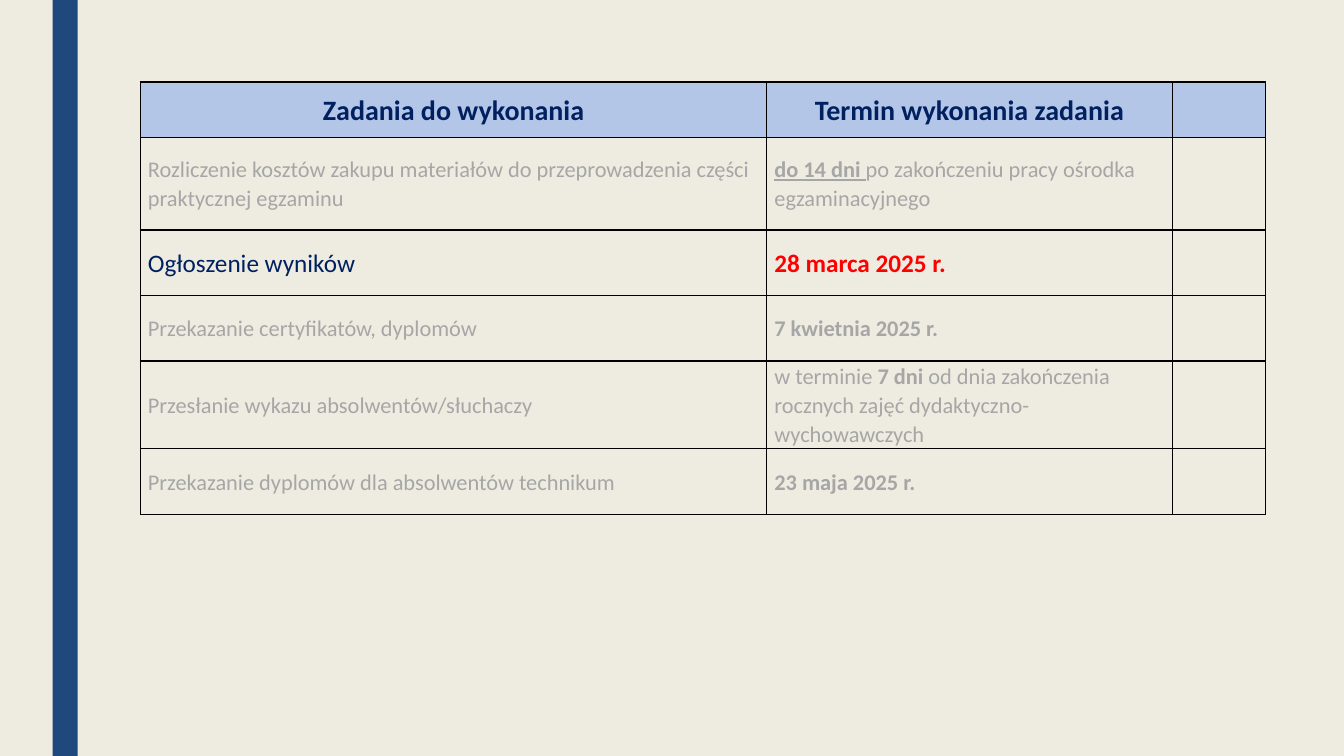
import pptx
import pptx.dml.color
import pptx.enum.shapes
import pptx.enum.text
import pptx.oxml
import pptx.oxml.ns
import pptx.util

Pt = pptx.util.Pt
ALIGN = pptx.enum.text.PP_ALIGN

COLORS = {
    "background": "EEECE1",
    "stripe": "1F497D",
    "header": "B4C6E7",
    "navy": "002060",
    "faded": "A6A6A6",
    "alert": "FF0000",
    "border": "000000",
}
COLUMN_WIDTHS = [447.5, 289.5, 67]
ROW_HEIGHTS = [39.5, 66.25, 46.8, 46.8, 46, 46.8]
HEADINGS = ["Zadania do wykonania", "Termin wykonania zadania"]
TASKS = [
    ("Rozliczenie kosztów zakupu materiałów do przeprowadzenia części praktycznej egzaminu",
     [("do 14 dni ", "bu"), ("po zakończeniu pracy ośrodka egzaminacyjnego", "")]),
    ("Ogłoszenie wyników", [("28 marca 2025 r.", "b")]),
    ("Przekazanie certyfikatów, dyplomów", [("7 kwietnia 2025 r.", "b")]),
    ("Przesłanie wykazu absolwentów/słuchaczy",
     [("w terminie ", ""), ("7 dni", "b"),
      (" od dnia zakończenia rocznych zajęć dydaktyczno-wychowawczych", "")]),
    ("Przekazanie dyplomów dla absolwentów technikum", [("23 maja 2025 r.", "b")]),
]
CURRENT_TASK = "Ogłoszenie wyników"


def rgb(name):
    return pptx.dml.color.RGBColor.from_string(COLORS[name])


def add_stripe(page, height):
    stripe = page.shapes.add_shape(
        pptx.enum.shapes.MSO_SHAPE.RECTANGLE, Pt(37.5), 0, Pt(18), height)
    stripe.shadow.inherit = False
    stripe.fill.solid()
    stripe.fill.fore_color.rgb = rgb("stripe")
    stripe.line.fill.background()


def add_borders(cell):
    properties = cell._tc.get_or_add_tcPr()
    for side in ("lnL", "lnR", "lnT", "lnB"):
        properties.append(pptx.oxml.parse_xml(
            f'<a:{side} {pptx.oxml.ns.nsdecls("a")} w="{Pt(1)}"><a:solidFill>'
            f'<a:srgbClr val="{COLORS["border"]}"/></a:solidFill></a:{side}>'))


def write_cell(cell, spans, size, color, align=ALIGN.LEFT):
    cell.vertical_anchor = pptx.enum.text.MSO_ANCHOR.MIDDLE
    cell.margin_left = cell.margin_right = Pt(5.4)
    cell.margin_top = cell.margin_bottom = 0
    para = cell.text_frame.paragraphs[0]
    para.alignment = align
    para.line_spacing = 1.07
    para.font.name = "Calibri"
    para.font.size = Pt(size)
    para.font.color.rgb = rgb(color)
    if len(spans) == 1:
        para.font.bold = "b" in spans[0][1]
    for text, style in spans:
        span = para.add_run()
        span.text = text
        if len(spans) > 1:
            span.font.bold = "b" in style
            span.font.underline = "u" in style


def add_schedule(page):
    table = page.shapes.add_table(
        len(ROW_HEIGHTS), len(COLUMN_WIDTHS), Pt(100.3), Pt(58.5),
        Pt(sum(COLUMN_WIDTHS)), Pt(sum(ROW_HEIGHTS))).table
    table.first_row = table.horz_banding = False
    for column, width in zip(table.columns, COLUMN_WIDTHS):
        column.width = Pt(width)
    for row, height in zip(table.rows, ROW_HEIGHTS):
        row.height = Pt(height)
    for cell in table.iter_cells():
        add_borders(cell)
        cell.fill.background()
    for cell in table.rows[0].cells:
        cell.fill.solid()
        cell.fill.fore_color.rgb = rgb("header")
    for index, heading in enumerate(HEADINGS):
        write_cell(table.cell(0, index), [(heading, "b")], 20, "navy", ALIGN.CENTER)
    for index, (task, deadline) in enumerate(TASKS, start=1):
        current = task == CURRENT_TASK
        size = 18 if current else 16
        write_cell(table.cell(index, 0), [(task, "")], size, "navy" if current else "faded")
        write_cell(table.cell(index, 1), deadline, size, "alert" if current else "faded")


def main():
    """Build the slide with the schedule of exam tasks."""
    deck = pptx.Presentation()
    deck.slide_width, deck.slide_height = Pt(960), Pt(540)
    page = deck.slides.add_slide(deck.slide_layouts[6])
    page.background.fill.solid()
    page.background.fill.fore_color.rgb = rgb("background")
    add_stripe(page, deck.slide_height)
    add_schedule(page)
    deck.save("out.pptx")


if __name__ == "__main__":
    main()
